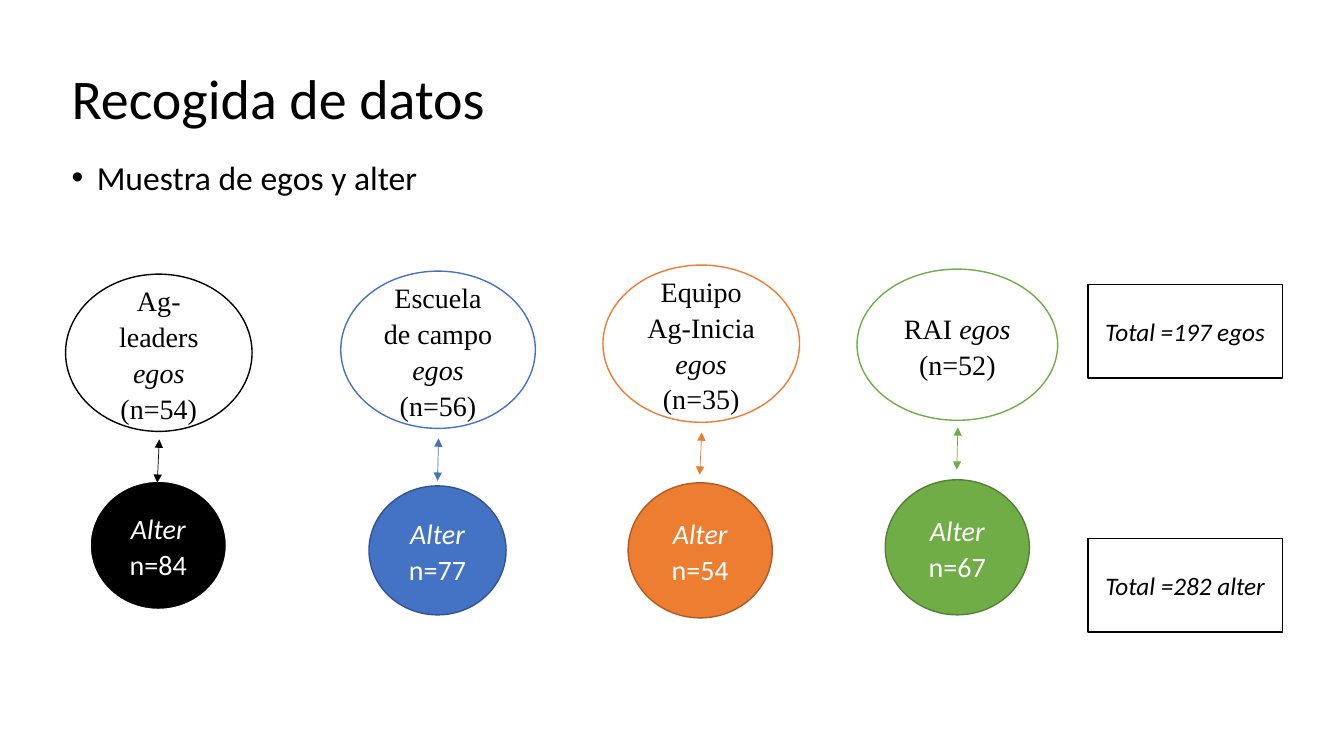
from dataclasses import dataclass

from lxml import etree
from pptx import Presentation
from pptx.dml.color import RGBColor
from pptx.enum.shapes import MSO_CONNECTOR, MSO_SHAPE
from pptx.enum.text import MSO_ANCHOR, MSO_AUTO_SIZE, PP_ALIGN
from pptx.oxml.ns import qn
from pptx.util import Inches, Pt

ELLIPSE, RECTANGLE = MSO_SHAPE.OVAL, MSO_SHAPE.RECTANGLE
STRAIGHT = MSO_CONNECTOR.STRAIGHT
LEFT, CENTER = PP_ALIGN.LEFT, PP_ALIGN.CENTER
TOP, MIDDLE = MSO_ANCHOR.TOP, MSO_ANCHOR.MIDDLE
NO_AUTO_SIZE = MSO_AUTO_SIZE.NONE


@dataclass(frozen=True)
class Theme:
    sans: str = "Calibri"
    serif: str = "Times New Roman"
    black: str = "000000"
    white: str = "FFFFFF"
    blue: str = "4472C4"
    dark_blue: str = "325491"
    orange: str = "ED7D31"
    dark_orange: str = "AF5C24"
    green: str = "70AD47"
    dark_green: str = "538035"
    title_size: float = 40
    body_size: float = 24
    node_size: float = 20
    total_size: float = 18
    outline: float = 1
    heavy_outline: float = 1.5
    arrow: float = 0.5


THEME = Theme()


@dataclass(frozen=True)
class Box:
    left: float
    top: float
    width: float
    height: float


@dataclass(frozen=True)
class TextRun:
    text: str
    italic: bool = False


@dataclass(frozen=True)
class TextStyle:
    size: float
    color: str = THEME.black
    font: str = THEME.sans
    line_spacing: float = 1.0
    space_after: float = 0


@dataclass(frozen=True)
class Group:
    name: str
    egos: int
    alters: int
    ego_box: Box
    alter_box: Box
    arrow_start: tuple[float, float]
    arrow_end: tuple[float, float]
    color: str
    alter_outline: str
    alter_outline_width: float = THEME.outline


@dataclass(frozen=True)
class Total:
    text: str
    top: float


TITLE_STYLE = TextStyle(THEME.title_size, line_spacing=0.9)
BODY_STYLE = TextStyle(THEME.body_size, line_spacing=0.9)
EGO_STYLE = TextStyle(THEME.node_size, font=THEME.serif, line_spacing=1.07, space_after=8)
ALTER_STYLE = TextStyle(THEME.node_size, THEME.white, line_spacing=1.07, space_after=8)
TOTAL_STYLE = TextStyle(THEME.total_size)

GROUPS = [
    Group("Ag-leaders", 54, 84, Box(0.65, 2.72, 1.85, 1.56), Box(0.89, 4.77, 1.36, 1.28),
          (1.56, 4.79), (1.58, 4.36), THEME.black, THEME.white, THEME.heavy_outline),
    Group("Escuela de campo", 56, 77, Box(3.38, 2.69, 1.93, 1.56), Box(3.66, 4.82, 1.36, 1.28),
          (4.34, 4.77), (4.35, 4.35), THEME.blue, THEME.dark_blue),
    Group("Equipo Ag-Inicia", 35, 54, Box(5.98, 2.63, 1.95, 1.56), Box(6.23, 4.79, 1.43, 1.34),
          (6.94, 4.71), (6.96, 4.29), THEME.orange, THEME.dark_orange),
    Group("RAI", 52, 67, Box(8.5, 2.67, 1.99, 1.5), Box(8.78, 4.76, 1.43, 1.34),
          (9.49, 4.66), (9.5, 4.24), THEME.green, THEME.dark_green),
]
TOTALS = [Total("Total =197 egos", 2.82), Total("Total =282 alter", 5.34)]


def write_text(shape, runs: list[TextRun], style: TextStyle, alignment, anchor):
    """Fill the shape's only paragraph with styled runs and return the paragraph."""
    frame = shape.text_frame
    frame.word_wrap = True
    frame.auto_size = NO_AUTO_SIZE
    frame.vertical_anchor = anchor
    paragraph = frame.paragraphs[0]
    paragraph.alignment = alignment
    paragraph.line_spacing = style.line_spacing
    paragraph.space_after = Pt(style.space_after)
    for text_run in runs:
        run = paragraph.add_run()
        run.text = text_run.text
        run.font.name = style.font
        run.font.size = Pt(style.size)
        run.font.italic = text_run.italic
        run.font.color.rgb = RGBColor.from_string(style.color)
    return paragraph


def place(shape, box: Box) -> None:
    shape.left, shape.top = Inches(box.left), Inches(box.top)
    shape.width, shape.height = Inches(box.width), Inches(box.height)


def set_bullet(paragraph, indent: float) -> None:
    properties = paragraph._p.get_or_add_pPr()
    properties.set("marL", str(Inches(indent)))
    properties.set("indent", str(-Inches(indent)))
    etree.SubElement(properties, qn("a:buFont"), typeface="Arial")
    etree.SubElement(properties, qn("a:buChar"), char="•")


def add_node(slide, preset, box: Box, fill: str, outline: str, width: float,
             runs: list[TextRun], style: TextStyle) -> None:
    """Draw an outlined shape with centred text."""
    shape = slide.shapes.add_shape(preset, Inches(box.left), Inches(box.top),
                                   Inches(box.width), Inches(box.height))
    shape.shadow.inherit = False
    shape.fill.solid()
    shape.fill.fore_color.rgb = RGBColor.from_string(fill)
    shape.line.color.rgb = RGBColor.from_string(outline)
    shape.line.width = Pt(width)
    write_text(shape, runs, style, CENTER, MIDDLE)


def add_double_arrow(slide, start: tuple[float, float], end: tuple[float, float],
                     color: str) -> None:
    connector = slide.shapes.add_connector(STRAIGHT, *map(Inches, start + end))
    connector.line.color.rgb = RGBColor.from_string(color)
    connector.line.width = Pt(THEME.arrow)
    line = connector.line._get_or_add_ln()
    for end_tag in ("a:headEnd", "a:tailEnd"):
        etree.SubElement(line, qn(end_tag), type="triangle")
    etree.SubElement(connector._element.spPr, qn("a:effectLst"))


def add_group(slide, group: Group) -> None:
    """Draw the egos, their alters and the arrow between them."""
    add_node(slide, ELLIPSE, group.ego_box, THEME.white, group.color, THEME.outline,
             [TextRun(f"{group.name} "), TextRun("egos", True), TextRun(f" (n={group.egos})")],
             EGO_STYLE)
    add_node(slide, ELLIPSE, group.alter_box, group.color, group.alter_outline,
             group.alter_outline_width,
             [TextRun("Alter", True), TextRun(f" n={group.alters}")], ALTER_STYLE)
    add_double_arrow(slide, group.arrow_start, group.arrow_end, group.color)


def main() -> None:
    presentation = Presentation()
    presentation.slide_width, presentation.slide_height = Inches(13.33), Inches(7.5)
    slide = presentation.slides.add_slide(presentation.slide_layouts[1])

    title, body = slide.shapes.title, slide.placeholders[1]
    place(title, Box(0.61, 0.28, 11.5, 1.45))
    write_text(title, [TextRun("Recogida de datos")], TITLE_STYLE, LEFT, MIDDLE)
    place(body, Box(0.61, 1.55, 11.5, 4.76))
    item = write_text(body, [TextRun("Muestra de egos y alter")], BODY_STYLE, LEFT, TOP)
    item.space_before = Pt(10)
    set_bullet(item, 0.25)

    for group in GROUPS:
        add_group(slide, group)
    for total in TOTALS:
        add_node(slide, RECTANGLE, Box(10.79, total.top, 1.93, 0.93), THEME.white, THEME.black,
                 THEME.outline, [TextRun(total.text, True)], TOTAL_STYLE)
    presentation.save("out.pptx")


if __name__ == "__main__":
    main()
